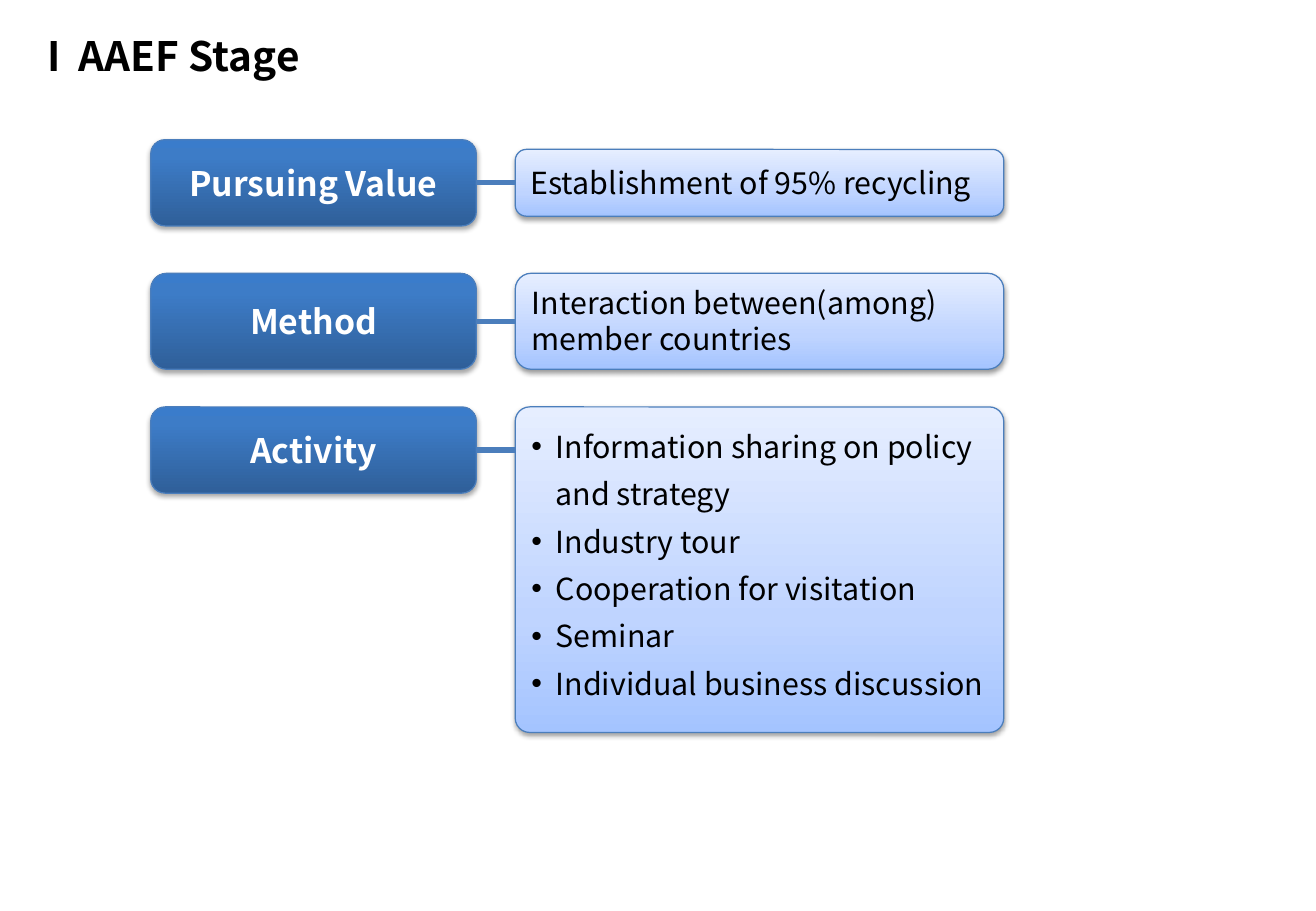
import copy
import dataclasses

import lxml.etree
import pptx
import pptx.dml.color
import pptx.enum.shapes
import pptx.enum.text
import pptx.oxml.ns
import pptx.util

Inches = pptx.util.Inches
Pt = pptx.util.Pt
Rgb = pptx.dml.color.RGBColor.from_string
qn = pptx.oxml.ns.qn
Anchor = pptx.enum.text.MSO_ANCHOR
Align = pptx.enum.text.PP_ALIGN


@dataclasses.dataclass(frozen=True)
class Theme:
    """Colours, type sizes and surface styles of the slide."""
    font: str = "Noto Sans CJK KR"
    dark: str = "000000"
    light: str = "FFFFFF"
    edge: str = "4B7EBC"
    title_size: int = 24
    label_size: int = 20
    body_size: int = 18
    label_stops: tuple = ((0, "2F5F99"), (0.8, "3D7CC7"), (1, "3A7CCB"))
    body_stops: tuple = ((0, "A4C4FF"), (0.35, "BFD4FF"), (1, "E6EEFF"))
    label_shadow: tuple = (35, 1.8)
    body_shadow: tuple = (38, 1.6)


THEME = Theme()
WIDTH, HEIGHT = 10.83, 7.5
ROW_PITCH = 1.1
LABEL_SHARE, BODY_SHARE = 2.68 / 7.02, 4.02 / 7.02

STAGES = [
    {"label": "Pursuing Value", "height": 0.71, "body_height": 0.55,
     "lines": ["Establishment of 95% recycling"], "anchor": Anchor.MIDDLE},
    {"label": "Method", "height": 0.79, "body_height": 0.79,
     "lines": ["Interaction between(among) member countries"], "anchor": Anchor.TOP},
    {"label": "Activity", "height": 0.71, "body_height": 2.68,
     "lines": ["Information sharing on policy and strategy", "Industry tour",
               "Cooperation for visitation", "Seminar", "Individual business discussion"],
     "anchor": Anchor.TOP, "bulleted": True, "corner": 0.044},
]


def apply(target, formats):
    """Set each named attribute of the target."""
    for name, value in formats.items():
        setattr(target, name, value)


def write(frame, lines, size, color, bold=False, align=Align.LEFT, bulleted=False):
    """Write one paragraph per line, bulleted when asked."""
    for index, line in enumerate(lines):
        paragraph = frame.add_paragraph() if index else frame.paragraphs[0]
        paragraph.alignment = align
        run = paragraph.add_run()
        run.text = line
        apply(run.font, {"name": THEME.font, "size": Pt(size), "bold": bold})
        run.font.color.rgb = Rgb(color)
        east_asian = lxml.etree.SubElement(run.font._element, qn("a:ea"))
        east_asian.set("typeface", THEME.font)
        if bulleted:
            paragraph.line_spacing = 1.3
            properties = paragraph._p.get_or_add_pPr()
            properties.set("marL", str(Inches(0.2)))
            properties.set("indent", str(Inches(-0.2)))
            lxml.etree.SubElement(properties, qn("a:buFont")).set("typeface", "Arial")
            lxml.etree.SubElement(properties, qn("a:buChar")).set("char", "•")


def add_shadow(shape, opacity, distance):
    """Give the shape a soft shadow that falls straight down."""
    shape.shadow.inherit = False
    effects = shape._element.spPr.find(qn("a:effectLst"))
    shadow = lxml.etree.SubElement(effects, qn("a:outerShdw"), {
        "blurRad": str(Pt(3.1)), "dist": str(Pt(distance)),
        "dir": "5400000", "rotWithShape": "0"})
    color = lxml.etree.SubElement(shadow, qn("a:srgbClr"), val=THEME.dark)
    lxml.etree.SubElement(color, qn("a:alpha"), val=str(opacity * 1000))


def add_panel(slide, box, stops, shadow, corner=None):
    """Add a rounded panel with a vertical gradient and return its text frame."""
    panel = slide.shapes.add_shape(
        pptx.enum.shapes.MSO_SHAPE.ROUNDED_RECTANGLE, *map(Inches, box))
    if corner:
        panel.adjustments[0] = corner
    panel.fill.gradient()
    panel.fill.gradient_angle = 90
    stop_list = panel._element.spPr.find(".//" + qn("a:gsLst"))
    stop_list.append(copy.deepcopy(stop_list[-1]))
    for stop, (position, color) in zip(panel.fill.gradient_stops, stops):
        stop.position = position
        stop.color.rgb = Rgb(color)
    panel.line.color.rgb = Rgb(THEME.edge)
    panel.line.width = Pt(0.75)
    add_shadow(panel, *shadow)
    panel.text_frame.word_wrap = True
    return panel.text_frame


def add_link(slide, start, end, y):
    """Join a label to its body with a level line."""
    link = slide.shapes.add_connector(
        pptx.enum.shapes.MSO_CONNECTOR.STRAIGHT, *map(Inches, (start, y, end, y)))
    link.line.color.rgb = Rgb(THEME.edge)
    link.line.width = Pt(3)
    lxml.etree.SubElement(link._element.spPr, qn("a:effectLst"))


def add_title(slide, box, title):
    """Add the slide title in a box that fits its text."""
    frame = slide.shapes.add_textbox(*map(Inches, box)).text_frame
    apply(frame, {"word_wrap": False,
                  "auto_size": pptx.enum.text.MSO_AUTO_SIZE.SHAPE_TO_FIT_TEXT})
    write(frame, [title], THEME.title_size, THEME.dark, bold=True)


def add_stage(slide, box, stage):
    """Add one label, its body and the line between them."""
    left, top, width, height = box
    label_width, body_width = width * LABEL_SHARE, width * BODY_SHARE
    body_left = left + width - body_width
    middle = top + height / 2
    body_height = stage["body_height"]
    body_top = max(top, middle - body_height / 2)
    if body_height > height:
        body_top = top
    label = add_panel(slide, (left, top, label_width, height),
                      THEME.label_stops, THEME.label_shadow)
    label.vertical_anchor = Anchor.MIDDLE
    write(label, [stage["label"]], THEME.label_size, THEME.light,
          bold=True, align=Align.CENTER)
    body = add_panel(slide, (body_left, body_top, body_width, body_height),
                     THEME.body_stops, THEME.body_shadow, stage.get("corner"))
    body.vertical_anchor = stage["anchor"]
    write(body, stage["lines"], THEME.body_size, THEME.dark,
          bulleted=stage.get("bulleted", False))
    add_link(slide, left + label_width, body_left, middle)


def add_stages(slide, box, stages):
    """Stack the stages down the box at an equal pitch."""
    left, top, width = box
    for row, stage in enumerate(stages):
        add_stage(slide, (left, top + row * ROW_PITCH, width, stage["height"]), stage)


def main():
    """Build the slide and save it."""
    deck = pptx.Presentation()
    apply(deck, {"slide_width": Inches(WIDTH), "slide_height": Inches(HEIGHT)})
    slide = deck.slides.add_slide(deck.slide_layouts[6])
    add_title(slide, (0.29, 0.21, 2.43, 0.5), "I  AAEF Stage")
    add_stages(slide, (1.24, 1.15, 7.02), STAGES)
    deck.save("out.pptx")


if __name__ == "__main__":
    main()
